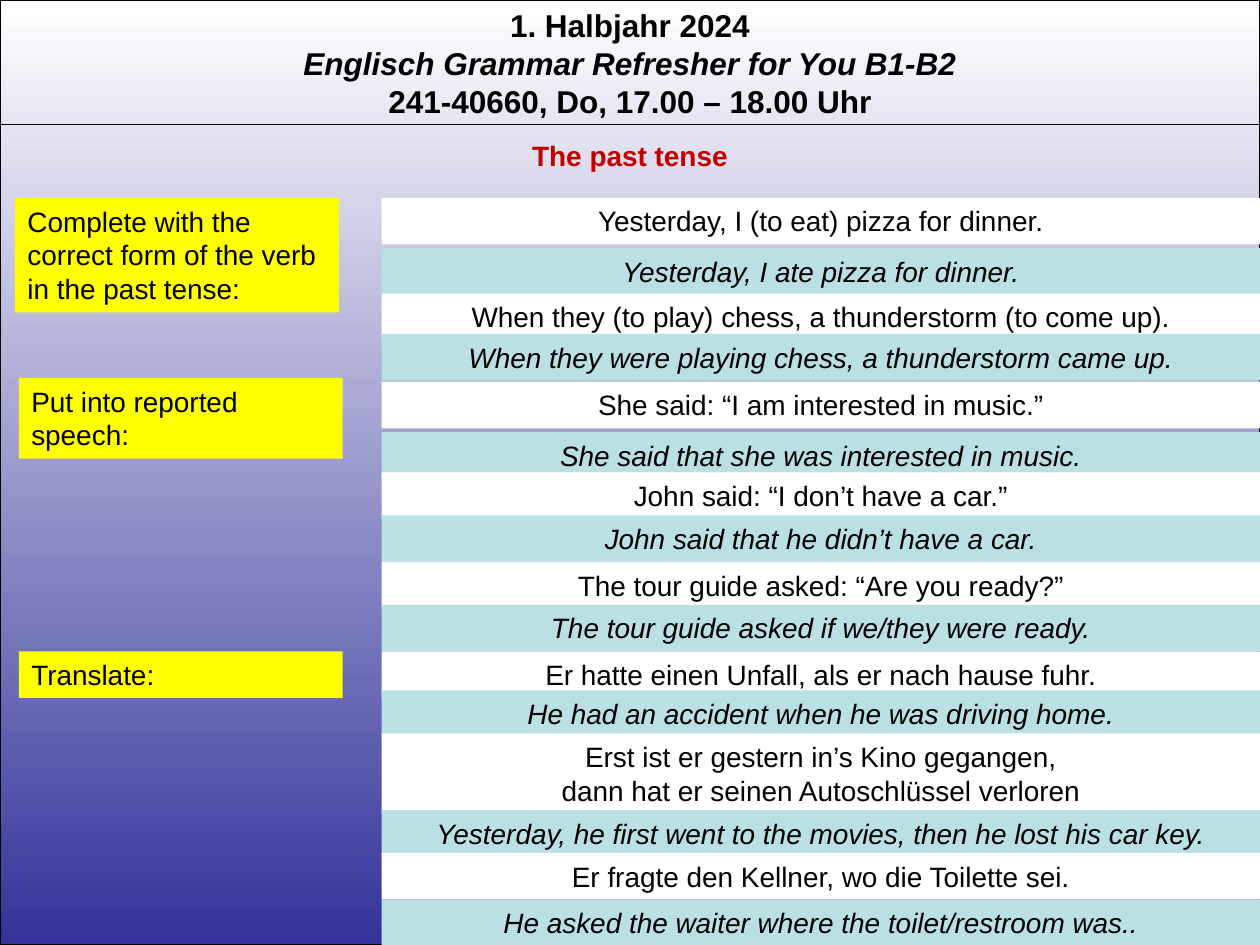
from pptx import Presentation
from pptx.dml.color import RGBColor
from pptx.enum.shapes import MSO_CONNECTOR, MSO_SHAPE
from pptx.enum.text import MSO_ANCHOR, MSO_AUTO_SIZE, PP_ALIGN
from pptx.util import Inches, Pt
from lxml.etree import SubElement
from pptx.oxml.ns import qn

BLACK = RGBColor(0x00, 0x00, 0x00)
WHITE = RGBColor(0xFF, 0xFF, 0xFF)
INDIGO = RGBColor(0x33, 0x33, 0x99)
RED = RGBColor(0xC0, 0x00, 0x00)
YELLOW = RGBColor(0xFF, 0xFF, 0x00)
TEAL = RGBColor(0xBB, 0xE0, 0xE3)

FONT = "Arial"
SLIDE_W, SLIDE_H = 10, 7.5
HEADER_RULE = 0.99
TASK_W = 2.57
SENTENCE_LEFT = 3.03
SENTENCE_W = SLIDE_W - SENTENCE_LEFT
LINE_H, PADDING = 0.27, 0.1  # one 16 pt line, insets above and below

COURSE = [
    "1. Halbjahr 2024",
    "Englisch Grammar Refresher for You B1-B2",
    "241-40660, Do, 17.00 – 18.00 Uhr",
]

# left, top, number of lines, instruction
TASKS = [
    (0.12, 1.57, 3, "Complete with the correct form of the verb in the past tense:"),
    (0.15, 3.0, 2, "Put into reported speech:"),
    (0.15, 5.17, 1, "Translate:"),
]

# question top, question, answer top, answer
EXERCISES = [
    (1.57, "Yesterday, I (to eat) pizza for dinner.",
     1.97, "Yesterday, I ate pizza for dinner."),
    (2.33, "When they (to play) chess, a thunderstorm (to come up).",
     2.65, "When they were playing chess, a thunderstorm came up."),
    (3.03, "She said: “I am interested in music.”",
     3.43, "She said that she was interested in music."),
    (3.75, "John said: “I don’t have a car.”",
     4.09, "John said that he didn’t have a car."),
    (4.46, "The tour guide asked: “Are you ready?”",
     4.8, "The tour guide asked if we/they were ready."),
    (5.17, "Er hatte einen Unfall, als er nach hause fuhr.",
     5.48, "He had an accident when he was driving home."),
    (5.82, "Erst ist er gestern in’s Kino gegangen,\ndann hat er seinen Autoschlüssel verloren",
     6.43, "Yesterday, he first went to the movies, then he lost his car key."),
    (6.77, "Er fragte den Kellner, wo die Toilette sei.",
     7.14, "He asked the waiter where the toilet/restroom was.."),
]


def box_height(lines):
    return lines * LINE_H + PADDING


def write(shape, text, size=16, color=BLACK, align=PP_ALIGN.CENTER, bold=False, italic=False):
    frame = shape.text_frame
    frame.text = text
    frame.word_wrap = True
    frame.auto_size = MSO_AUTO_SIZE.SHAPE_TO_FIT_TEXT
    frame.vertical_anchor = MSO_ANCHOR.TOP
    for paragraph in frame.paragraphs:
        paragraph.alignment = align
        for run in paragraph.runs:
            font = run.font
            font.name, font.size = FONT, Pt(size)
            font.bold, font.italic = bold, italic
            font.color.rgb = color
    return frame


def add_background(slide):
    backdrop = slide.shapes.add_shape(
        MSO_SHAPE.RECTANGLE, 0, 0, Inches(SLIDE_W), Inches(SLIDE_H))
    backdrop.shadow.inherit = False
    backdrop.fill.gradient()
    backdrop.fill.gradient_angle = 270  # white at the top
    for stop, color in zip(backdrop.fill.gradient_stops, (WHITE, INDIGO)):
        stop.color.rgb = color
    backdrop.line.color.rgb = BLACK
    backdrop.line.width = Pt(0.75)


def add_heading(slide, top, height, text, **style):
    heading = slide.shapes.add_textbox(0, Inches(top), Inches(SLIDE_W), Inches(height))
    return write(heading, text, bold=True, **style)


def add_rule(slide, top):
    rule = slide.shapes.add_connector(
        MSO_CONNECTOR.STRAIGHT, 0, Inches(top), Inches(SLIDE_W), Inches(top))
    rule.line.color.rgb = BLACK
    rule.line.width = Pt(0.75)
    SubElement(rule._element.spPr, qn("a:effectLst"))


def add_panel(slide, left, top, width, lines, fill, text, **style):
    panel = slide.shapes.add_shape(
        MSO_SHAPE.RECTANGLE, Inches(left), Inches(top), Inches(width), Inches(box_height(lines)))
    panel.shadow.inherit = False
    panel.fill.solid()
    panel.fill.fore_color.rgb = fill
    panel.line.fill.background()
    write(panel, text, **style)


def add_sentence(slide, top, fill, text, italic=False):
    lines = len(text.splitlines())
    add_panel(slide, SENTENCE_LEFT, top, SENTENCE_W, lines, fill, text, italic=italic)


def main():
    prs = Presentation()
    prs.slide_width, prs.slide_height = Inches(SLIDE_W), Inches(SLIDE_H)
    slide = prs.slides.add_slide(prs.slide_layouts[6])

    # Course header
    add_background(slide)
    course = add_heading(slide, 0, 1.01, "\n".join(COURSE), size=18)
    course.paragraphs[1].runs[0].font.italic = True
    add_rule(slide, HEADER_RULE)

    # Topic
    add_heading(slide, 1.05, box_height(1), "The past tense", color=RED)

    # Instructions on the left
    for left, top, lines, instruction in TASKS:
        add_panel(slide, left, top, TASK_W, lines, YELLOW, instruction, align=PP_ALIGN.LEFT)

    # Questions with their answers on the right
    for question_top, question, answer_top, answer in EXERCISES:
        add_sentence(slide, question_top, WHITE, question)
        add_sentence(slide, answer_top, TEAL, answer, italic=True)

    prs.save("out.pptx")


if __name__ == "__main__":
    main()
